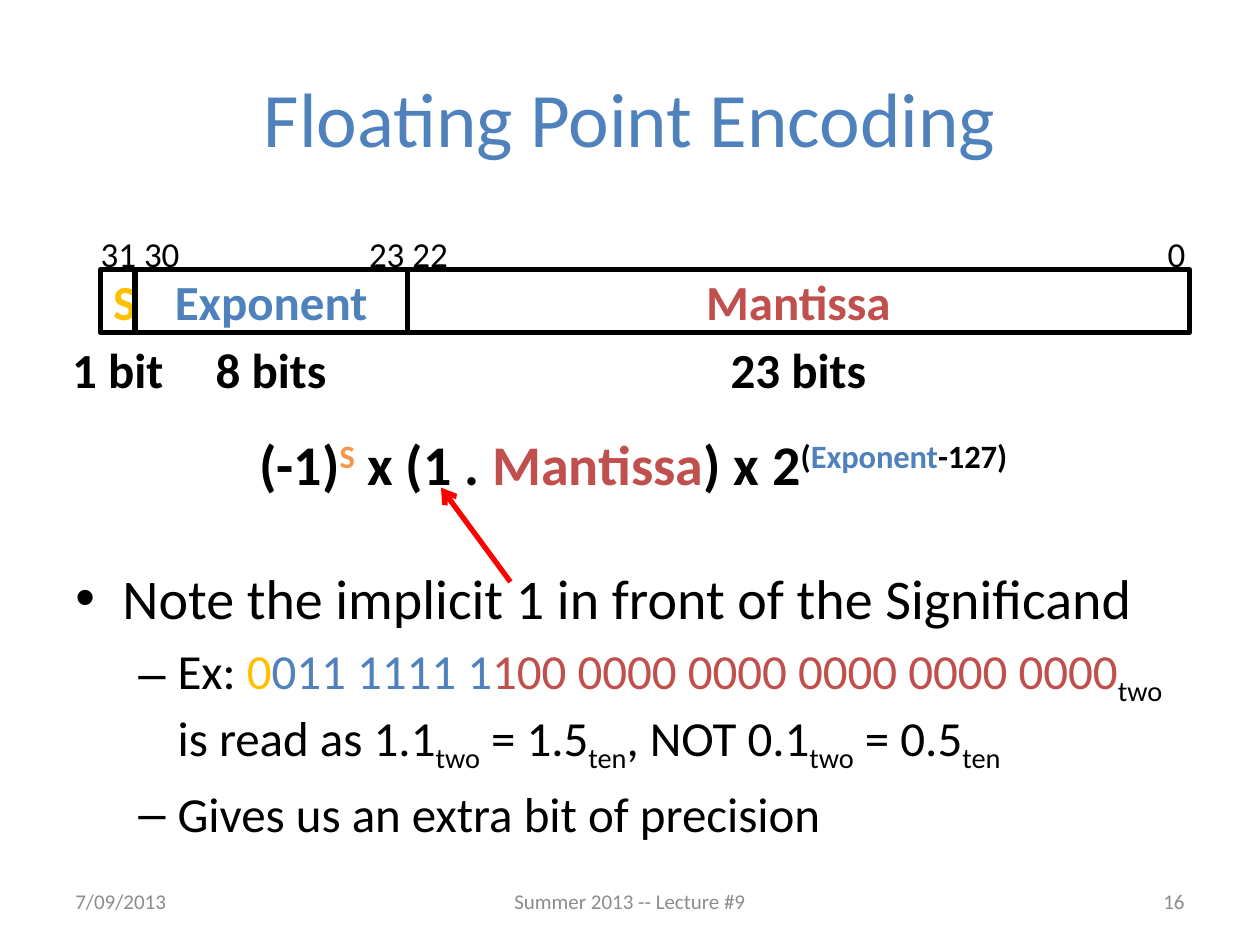
"""Build the floating point encoding slide."""
from lxml.etree import SubElement
from pptx import Presentation
from pptx.dml.color import RGBColor
from pptx.enum.shapes import MSO_CONNECTOR as CONN, MSO_SHAPE as SHAPE
from pptx.enum.text import MSO_ANCHOR as ANCHOR, PP_ALIGN as ALIGN
from pptx.oxml.ns import qn
from pptx.util import Cm, Pt

BLACK = RGBColor(0, 0, 0)
GREY = RGBColor(0x8C, 0x8C, 0x8C)
BLUE = RGBColor(0x4F, 0x81, 0xBD)
RED = RGBColor(0xC0, 0x50, 0x4D)
GOLD = RGBColor(0xFF, 0xC0, 0x00)
ORANGE = RGBColor(0xF7, 0x96, 0x46)
ARROW_RED = RGBColor(0xFF, 0, 0)
SUPER, SUB = 30000, -25000


class SlideBuilder:
    def __init__(self, prs, font="Calibri"):
        self.slide = prs.slides.add_slide(prs.slide_layouts[6])
        self.font = font

    def style(self, r, size, color=BLACK, bold=False, baseline=0):
        r.font.name = self.font
        r.font.size = Pt(size)
        r.font.bold = bold
        r.font.color.rgb = color
        if baseline:
            r.font._element.set("baseline", str(baseline))

    def runs(self, p, parts, size, bold=False):
        for text, color, baseline in parts:
            r = p.add_run()
            r.text = text
            self.style(r, size, color, bold, baseline)

    def box(self, x, y, w, h, wrap=True, anchor=ANCHOR.TOP):
        tf = self.slide.shapes.add_textbox(Cm(x), Cm(y), Cm(w), Cm(h)).text_frame
        tf.word_wrap = wrap
        tf.vertical_anchor = anchor
        return tf

    def label(self, text, x, y, w, h, size, color=BLACK, bold=False,
              align=ALIGN.LEFT, wrap=False, anchor=ANCHOR.TOP):
        tf = self.box(x, y, w, h, wrap, anchor)
        tf.text = text
        p = tf.paragraphs[0]
        p.alignment = align
        self.style(p.runs[0], size, color, bold)

    def field(self, text, x, y, w, h, color):
        sp = self.slide.shapes.add_shape(SHAPE.RECTANGLE, Cm(x), Cm(y), Cm(w), Cm(h))
        sp.shadow.inherit = False
        sp.fill.background()
        sp.line.color.rgb = BLACK
        sp.line.width = Pt(3)
        tf = sp.text_frame
        tf.text = text
        tf.vertical_anchor = ANCHOR.MIDDLE
        p = tf.paragraphs[0]
        p.alignment = ALIGN.CENTER
        self.style(p.runs[0], 28, color, True)

    def formula(self, parts, x, y, w, h):
        tf = self.box(x, y, w, h)
        tf.margin_left = tf.margin_right = Cm(0.18)
        tf.margin_top = tf.margin_bottom = Cm(0.08)
        p = tf.paragraphs[0]
        p.alignment = ALIGN.CENTER
        p.line_spacing = 0.75
        self.runs(p, parts, 32, True)

    def bullets(self, items, x, y, w, h):
        tf = self.box(x, y, w, h)
        levels = [("•", 0.95, 0.95, 32), ("–", 2.06, 0.79, 28)]
        for i, (level, parts) in enumerate(items):
            p = tf.add_paragraph() if i else tf.paragraphs[0]
            char, left, hang, size = levels[level]
            p.level = level
            if i:
                p.space_before = Pt(size * 0.2)
            pPr = p._p.get_or_add_pPr()
            pPr.set("marL", str(Cm(left)))
            pPr.set("indent", str(-Cm(hang)))
            SubElement(pPr, qn("a:buFont"), typeface="Arial")
            SubElement(pPr, qn("a:buChar"), char=char)
            self.runs(p, parts, size)

    def arrow(self, x1, y1, x2, y2, color):
        cxn = self.slide.shapes.add_connector(CONN.STRAIGHT, Cm(x1), Cm(y1), Cm(x2), Cm(y2))
        cxn.line.color.rgb = color
        cxn.line.width = Pt(3)
        SubElement(cxn.line._get_or_add_ln(), qn("a:tailEnd"), type="arrow")
        SubElement(cxn._element.spPr, qn("a:effectLst"))


def main():
    prs = Presentation()
    prs.slide_width, prs.slide_height = Cm(25.4), Cm(19.05)
    s = SlideBuilder(prs)

    s.label("Floating Point Encoding", 1.27, 0.76, 22.86, 3.18, 44, BLUE,
            align=ALIGN.CENTER, wrap=True, anchor=ANCHOR.MIDDLE)

    s.bullets([
        (0, [("Note the implicit 1 in front of the Significand", BLACK, 0)]),
        (1, [("Ex: ", BLACK, 0), ("0", GOLD, 0), ("011 1111 1", BLUE, 0),
             ("100 0000 0000 0000 0000 0000", RED, 0), ("two", BLACK, SUB),
             (" is read as 1.1", BLACK, 0), ("two", BLACK, SUB),
             (" = 1.5", BLACK, 0), ("ten", BLACK, SUB),
             (", NOT 0.1", BLACK, 0), ("two", BLACK, SUB),
             (" = 0.5", BLACK, 0), ("ten", BLACK, SUB)]),
        (1, [("Gives us an extra bit of precision", BLACK, 0)]),
    ], 1.27, 11.23, 22.86, 6.93)

    for text, x, w, align in [("7/09/2013", 1.27, 5.92, ALIGN.LEFT),
                              ("Summer 2013 -- Lecture #9", 8.68, 8.04, ALIGN.CENTER),
                              ("16", 18.21, 5.92, ALIGN.RIGHT)]:
        s.label(text, x, 17.65, w, 1.02, 12, GREY, align=align, wrap=True,
                anchor=ANCHOR.MIDDLE)

    s.formula([("(-1)", BLACK, 0), ("S", ORANGE, SUPER), (" x (1 . ", BLACK, 0),
               ("Mantissa", RED, 0), (") x 2", BLACK, 0), ("(", BLACK, SUPER),
               ("Exponent", BLUE, SUPER), ("-127)", BLACK, SUPER)],
              0.13, 8.89, 25.4 - 0.13, 1.22)

    x = 2.03
    for name, bits, w, color in [("S", "1 bit", 0.69, GOLD),
                                 ("Exponent", "8 bits", 5.49, BLUE),
                                 ("Mantissa", "23 bits", 15.77, RED)]:
        s.field(name, x, 5.44, w, 1.27, color)
        label_w = max(w, 2.46)
        s.label(bits, x + (w - label_w) / 2, 6.71, label_w, 1.45, 28, bold=True,
                align=ALIGN.CENTER)
        x += w

    for text, x, w in [("31 30", 1.78, 2.11), ("23 22", 7.19, 2.11), ("0", 23.29, 0.86)]:
        s.label(text, x, 4.57, w, 1.12, 20)

    s.arrow(10.29, 11.73, 8.89, 9.83, ARROW_RED)
    prs.save("out.pptx")


if __name__ == "__main__":
    main()
